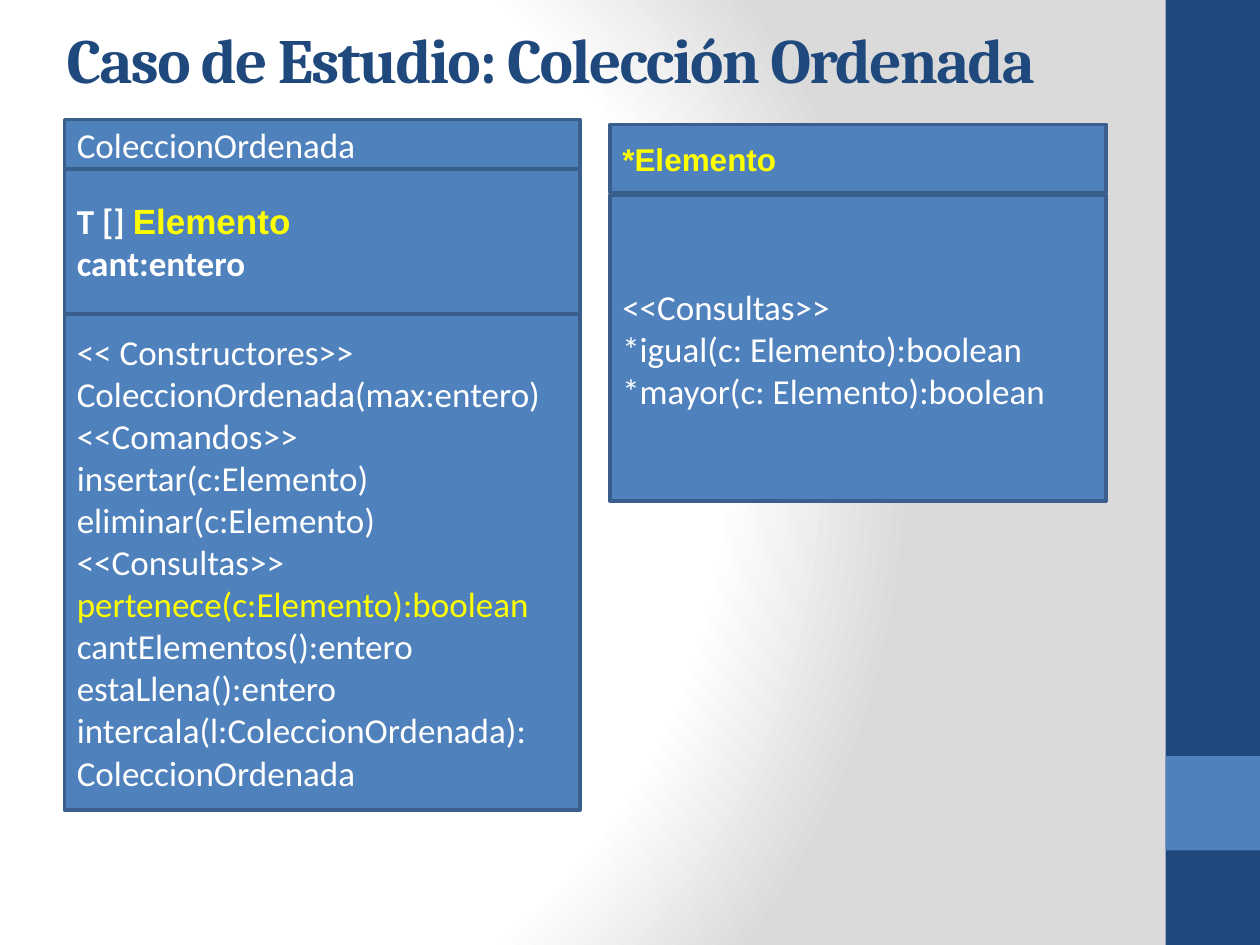
from pptx import Presentation
from pptx.dml.color import RGBColor
from pptx.enum.shapes import MSO_SHAPE
from pptx.enum.text import MSO_ANCHOR, PP_ALIGN
from pptx.oxml import parse_xml
from pptx.oxml.ns import nsdecls
from pptx.util import Pt

RECTANGLE = MSO_SHAPE.RECTANGLE
MIDDLE, BOTTOM = MSO_ANCHOR.MIDDLE, MSO_ANCHOR.BOTTOM
LEFT = PP_ALIGN.LEFT

NAVY = RGBColor(0x1F, 0x49, 0x7D)
BLUE = RGBColor(0x4F, 0x81, 0xBD)
OUTLINE = RGBColor(0x3A, 0x5F, 0x8C)
WHITE = RGBColor(0xFF, 0xFF, 0xFF)
YELLOW = RGBColor(0xFF, 0xFF, 0x00)
GREY = RGBColor(0xDA, 0xDA, 0xDA)

PAGE_WIDTH, PAGE_HEIGHT = 720, 540
BAND_WIDTH = 54


def paint_background(page):
    """Radial gradient, white out to three quarters and then grey."""
    stops = "".join(
        f'<a:gs pos="{position * 1000}"><a:srgbClr val="{color}"/></a:gs>'
        for position, color in ((0, WHITE), (75, WHITE), (100, GREY))
    )
    background = parse_xml(
        f'<p:bg {nsdecls("p", "a")}><p:bgPr><a:gradFill rotWithShape="1">'
        f'<a:gsLst>{stops}</a:gsLst><a:path path="circle">'
        '<a:fillToRect l="20000" t="50000" r="100000" b="50000"/></a:path>'
        '</a:gradFill><a:effectLst/></p:bgPr></p:bg>'
    )
    page.element.cSld.insert(0, background)


def add_rectangle(page, left, top, width, height, fill, outline=None):
    box = page.shapes.add_shape(RECTANGLE, Pt(left), Pt(top), Pt(width), Pt(height))
    box.shadow.inherit = False
    box.fill.solid()
    box.fill.fore_color.rgb = fill
    if outline is None:
        box.line.fill.background()
    else:
        box.line.color.rgb = outline
        box.line.width = Pt(2)
    return box


def add_span(para, text, size=20, color=WHITE, font="Calibri", bold=False):
    span = para.add_run()
    span.text = text
    span.font.size = Pt(size)
    span.font.name = font
    span.font.bold = bold
    span.font.color.rgb = color
    return span


def add_side_band(page, left, top, width, height):
    add_rectangle(page, left, top, width, height, NAVY)
    add_rectangle(page, left, top + height * 0.8, width, width, BLUE)


def add_title(page, left, top, width, height, text):
    box = page.shapes.add_textbox(Pt(left), Pt(top), Pt(width), Pt(height))
    frame = box.text_frame
    frame.word_wrap = True
    frame.vertical_anchor = BOTTOM
    span = add_span(frame.paragraphs[0], text, 36, NAVY, "Cambria", True)
    span.font._element.set("spc", "-100")


def add_class_box(page, left, top, width, sections, gap=0):
    """Stack sections of (height, lines); a line is a list of (text, style)."""
    for height, lines in sections:
        box = add_rectangle(page, left, top, width, height, BLUE, OUTLINE)
        frame = box.text_frame
        frame.word_wrap = True
        frame.vertical_anchor = MIDDLE
        for index, line in enumerate(lines):
            para = frame.add_paragraph() if index else frame.paragraphs[0]
            para.alignment = LEFT
            for text, style in line:
                add_span(para, text, **style)
        top += height + gap


def plain(*texts):
    return [[(text, {})] for text in texts]


BOLD = {"bold": True}
KEY = {"bold": True, "font": "Arial", "color": YELLOW}

COLLECTION = [
    (28.2, plain("ColeccionOrdenada")),
    (82.8, [
        [("T [] ", BOLD), ("Elemento", KEY)],
        [("cant:entero", BOLD)],
    ]),
    (283.6, [
        *plain(
            "<< Constructores>>",
            "ColeccionOrdenada(max:entero)",
            "<<Comandos>>",
            "insertar(c:Elemento)",
            "eliminar(c:Elemento)",
            "<<Consultas>>",
        ),
        [("pertenece(c:Elemento):boolean", {"color": YELLOW})],
        *plain(
            "cantElementos():entero",
            "estaLlena():entero",
            "intercala(l:ColeccionOrdenada):",
            "ColeccionOrdenada",
        ),
    ]),
]

ELEMENT = [
    (38.9, [[("*Elemento", {**KEY, "size": 18})]]),
    (175, plain(
        "<<Consultas>>",
        "*igual(c: Elemento):boolean",
        "*mayor(c: Elemento):boolean",
    )),
]


def main():
    deck = Presentation()
    deck.slide_width, deck.slide_height = Pt(PAGE_WIDTH), Pt(PAGE_HEIGHT)
    page = deck.slides.add_slide(deck.slide_layouts[6])
    paint_background(page)
    add_side_band(page, PAGE_WIDTH - BAND_WIDTH, 0, BAND_WIDTH, PAGE_HEIGHT)
    add_title(page, 31, 3.6, 594, 54.7, "Caso de Estudio: Colección Ordenada")
    add_class_box(page, 36.8, 68.3, 294.6, COLLECTION)
    add_class_box(page, 348.5, 71.2, 283.6, ELEMENT, gap=1.3)
    deck.save("out.pptx")


if __name__ == "__main__":
    main()
